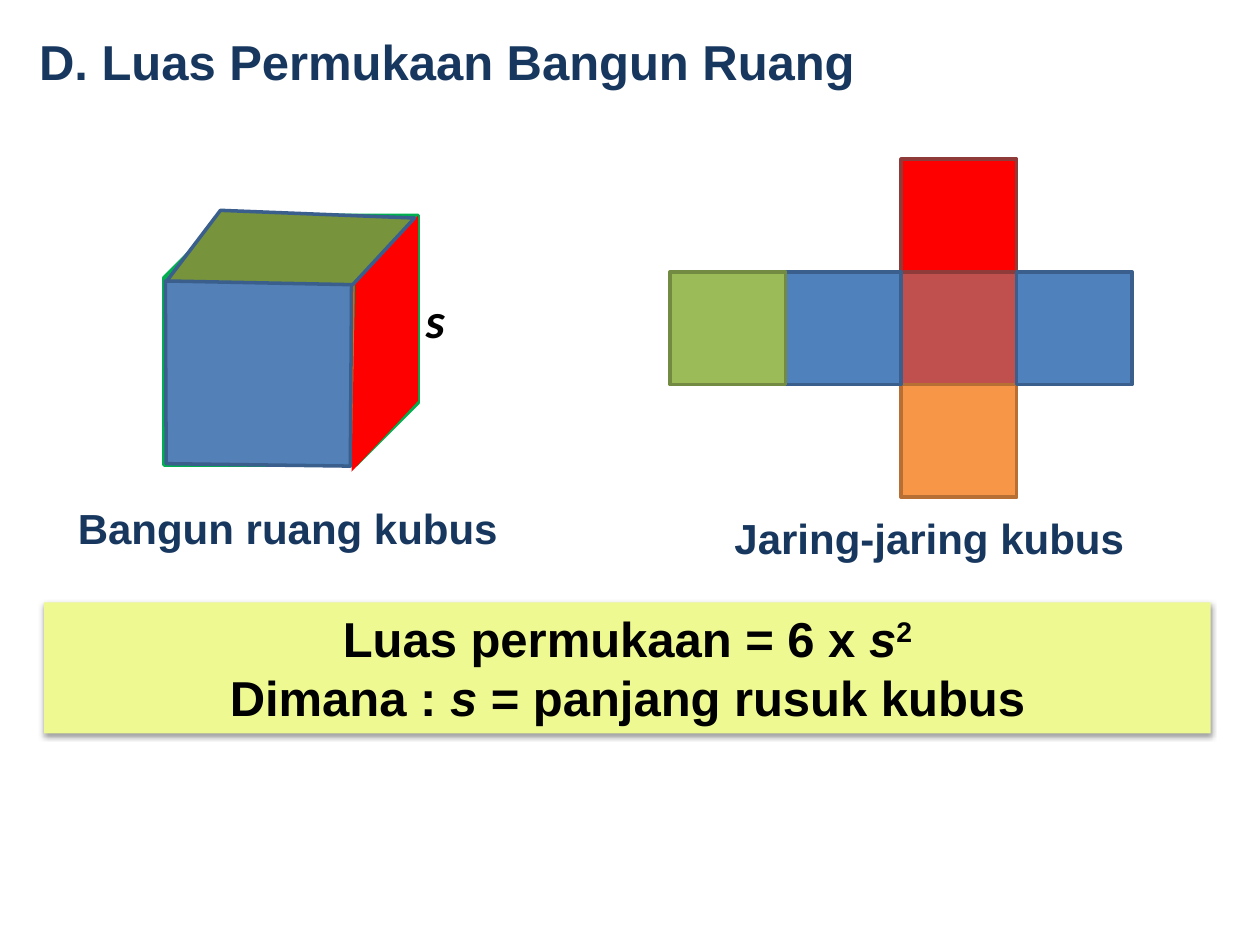
from dataclasses import dataclass

from lxml.etree import SubElement
from pptx import Presentation
from pptx.dml.color import RGBColor
from pptx.enum.shapes import MSO_SHAPE as Preset
from pptx.enum.text import MSO_ANCHOR as Anchor, MSO_AUTO_SIZE as AutoSize, PP_ALIGN as Align
from pptx.oxml.ns import qn
from pptx.util import Pt

NAVY, BLACK = "17375E", "000000"
BLUE, BLUE_EDGE = "4F81BD", "3A5F8C"
RED, RED_EDGE = "FF0000", "8E3B39"


@dataclass
class Square:
    column: int
    row: int
    fill: str
    edge: str


@dataclass
class Face:
    corners: list[tuple[float, float]]
    fill: str
    edge: str | None = None
    opacity: int = 100


@dataclass
class Label:
    text: str
    left: float
    top: float
    width: float
    height: float
    size: float = 24
    font: str = "Arial"
    color: str = NAVY
    italic: bool = False
    wrap: bool = False


@dataclass
class Span:
    text: str
    italic: bool = False
    raised: bool = False


def rgb(value: str) -> RGBColor:
    return RGBColor.from_string(value)


def paint(shape, fill: str, edge: str | None = None) -> None:
    shape.shadow.inherit = False
    shape.fill.solid()
    shape.fill.fore_color.rgb = rgb(fill)
    if edge:
        shape.line.color.rgb = rgb(edge)
        shape.line.width = Pt(2)
    else:
        shape.line.fill.background()


def style(font, size: float, color: str, name: str = "Arial", italic: bool = False) -> None:
    font.name, font.size = name, Pt(size)
    font.bold, font.italic = True, italic
    font.color.rgb = rgb(color)


def draw_square(page, square: Square) -> None:
    shape = page.shapes.add_shape(
        Preset.RECTANGLE, Pt(383 + 66 * square.column), Pt(91 + 64.4 * square.row), Pt(66), Pt(64.4))
    paint(shape, square.fill, square.edge)


def draw_face(page, face: Face) -> None:
    start, *others = [(Pt(x), Pt(y)) for x, y in face.corners]
    builder = page.shapes.build_freeform(*start)
    builder.add_line_segments(others, close=True)
    shape = builder.convert_to_shape()
    paint(shape, face.fill, face.edge)
    if face.opacity < 100:
        color = shape.fill._xPr.find(qn("a:solidFill"))[0]
        SubElement(color, qn("a:alpha"), val=str(face.opacity * 1000))


def draw_label(page, label: Label) -> None:
    box = page.shapes.add_textbox(Pt(label.left), Pt(label.top), Pt(label.width), Pt(label.height))
    frame = box.text_frame
    frame.word_wrap = label.wrap
    frame.auto_size = AutoSize.SHAPE_TO_FIT_TEXT
    frame.text = label.text
    style(frame.paragraphs[0].runs[0].font, label.size, label.color, label.font, label.italic)


def add_soft_shadow(shape) -> None:
    effects = shape._element.spPr.find(qn("a:effectLst"))
    shadow = SubElement(effects, qn("a:outerShdw"), blurRad=str(Pt(3.1)), dist=str(Pt(1.6)),
                        dir="5400000", rotWithShape="0")
    color = SubElement(shadow, qn("a:srgbClr"), val=BLACK)
    SubElement(color, qn("a:alpha"), val="38000")


def draw_formula(page, lines: list[list[Span]]) -> None:
    box = page.shapes.add_shape(Preset.RECTANGLE, Pt(25.2), Pt(344.2), Pt(666.7), Pt(74.9))
    paint(box, "EFF991")
    add_soft_shadow(box)
    frame = box.text_frame
    frame.word_wrap = True
    frame.vertical_anchor = Anchor.TOP
    for number, line in enumerate(lines):
        para = frame.add_paragraph() if number else frame.paragraphs[0]
        para.alignment = Align.CENTER
        for span in line:
            run = para.add_run()
            run.text = span.text
            style(run.font, 28, BLACK, italic=span.italic)
            if span.raised:
                run.font._element.set("baseline", "30000")


def draw_title(page, text: str) -> None:
    title = page.shapes.title
    title.left, title.top, title.width, title.height = Pt(15.1), Pt(14.4), Pt(604), Pt(41)
    frame = title.text_frame
    frame.text = text
    frame.auto_size = AutoSize.NONE
    frame.vertical_anchor = Anchor.TOP
    para = frame.paragraphs[0]
    para.alignment = Align.LEFT
    style(para.runs[0].font, 28, NAVY)


NET = [
    Square(2, 1, "C0504D", RED_EDGE),
    Square(2, 2, "F79646", "B76F34"),
    Square(2, 0, RED, RED_EDGE),
    Square(3, 1, BLUE, BLUE_EDGE),
    Square(1, 1, BLUE, BLUE_EDGE),
    Square(0, 1, "9BBB59", "738A42"),
]
# Right, front and top of the cube
FACES = [
    Face([(200.9, 269.6), (203, 161.3), (239, 123.1), (239, 229)], RED),
    Face([(94.5, 160.6), (95, 265), (200.2, 266.4), (200.9, 160.9)], BLUE, BLUE_EDGE, 97),
    Face([(95.3, 160.6), (126, 120.2), (236.9, 124.6), (201.6, 162.7)], "77933C", BLUE_EDGE),
]
LABELS = [
    Label("Bangun ruang kubus", 37.4, 283.7, 256.3, 36),
    Label("Jaring-jaring kubus", 412.6, 289.4, 239, 36),
    Label("s", 236.2, 162, 72, 41, 28, "Calibri", BLACK, italic=True, wrap=True),
]
FORMULA = [
    [Span("Luas permukaan = 6 x "), Span("s", italic=True), Span("2", raised=True)],
    [Span("Dimana : "), Span("s", italic=True), Span(" = panjang rusuk kubus")],
]


def main() -> None:
    deck = Presentation()
    deck.slide_width, deck.slide_height = Pt(720), Pt(540)
    page = deck.slides.add_slide(deck.slide_layouts[5])
    draw_title(page, "D. Luas Permukaan Bangun Ruang")

    # Unfolded net
    for square in NET:
        draw_square(page, square)

    # Formula
    draw_formula(page, FORMULA)

    # Cube with coloured faces
    cube = page.shapes.add_shape(Preset.CUBE, Pt(93.6), Pt(123.1), Pt(145.4), Pt(142.6))
    paint(cube, "E46C0A", "00B050")
    for face in FACES:
        draw_face(page, face)

    # Captions and edge name
    for label in LABELS:
        draw_label(page, label)

    deck.save("out.pptx")


if __name__ == "__main__":
    main()
